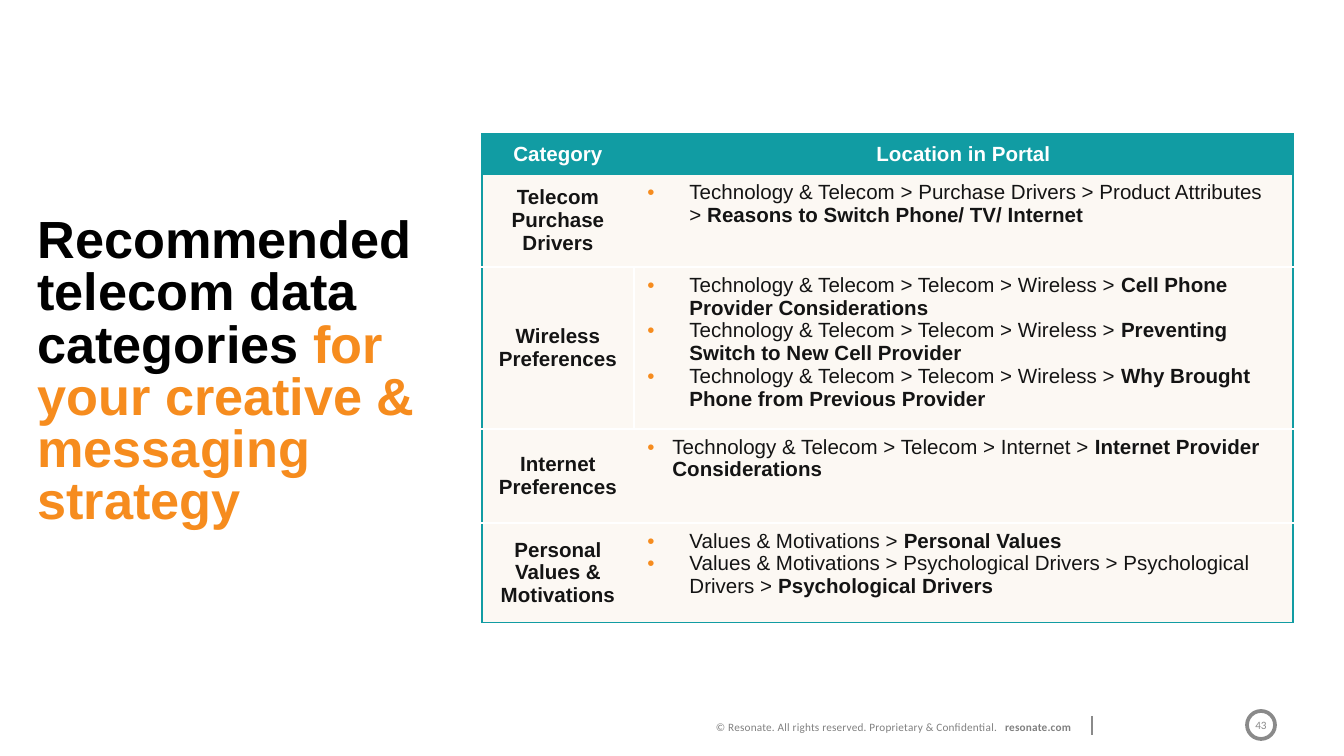
from lxml import etree
from pptx import Presentation
from pptx import util as u
from pptx.dml.color import RGBColor
from pptx.enum import shapes, text
from pptx.oxml.ns import qn

PX = 914400 / 134.4
TEAL, ORANGE, CREAM, INK, WHITE, GRAY = "119CA3", "F68C1E", "FCF8F3", "141414", "FFFFFF", "8A8A8A"
LEFT, CENTER, RIGHT = text.PP_ALIGN.LEFT, text.PP_ALIGN.CENTER, text.PP_ALIGN.RIGHT
TOP, MIDDLE = text.MSO_ANCHOR.TOP, text.MSO_ANCHOR.MIDDLE


def px(n):
    return u.Emu(round(n * PX))


def rgb(code):
    return RGBColor.from_string(code)


def sub(parent, tag, **attrs):
    return etree.SubElement(parent, qn(tag), attrs)


class Deck:
    def __init__(self, width, height):
        self.prs = Presentation()
        self.prs.slide_width, self.prs.slide_height = px(width), px(height)
        self.s = self.prs.slides.add_slide(self.prs.slide_layouts[5])

    def run(self, p, words, size, color, bold=False, font="Arial", spacing=None):
        r = p.add_run()
        r.text = words
        f = r.font
        f.size, f.name, f.bold = u.Pt(size), font, bold
        f.color.rgb = rgb(color)
        if spacing is not None:
            r._r.get_or_add_rPr().set("spc", str(round(spacing * 100)))

    def title(self, x, y, w, h, parts, size):
        sp = self.s.shapes.title
        sp.left, sp.top, sp.width, sp.height = map(px, (x, y, w, h))
        tf = sp.text_frame
        tf.word_wrap, tf.vertical_anchor = True, TOP
        tf.auto_size = text.MSO_AUTO_SIZE.NONE
        p = tf.paragraphs[0]
        p.alignment, p.line_spacing = LEFT, u.Pt(size)
        for words, color in parts:
            self.run(p, words, size, color, bold=True)

    def textbox(self, x, y, w, h, align):
        tf = self.s.shapes.add_textbox(*map(px, (x, y, w, h))).text_frame
        tf.word_wrap = True
        p = tf.paragraphs[0]
        p.alignment = align
        return p

    def line(self, x1, y1, x2, y2, color, width):
        c = self.s.shapes.add_connector(shapes.MSO_CONNECTOR.STRAIGHT, *map(px, (x1, y1, x2, y2)))
        c.line.color.rgb, c.line.width = rgb(color), u.Pt(width)
        sub(c._element.spPr, "a:effectLst")

    def badge(self, x, y, size, words, color):
        sp = self.s.shapes.add_shape(shapes.MSO_SHAPE.OVAL, *map(px, (x, y, size, size)))
        sp.shadow.inherit = False
        sp.fill.background()
        sp.line.color.rgb, sp.line.width = rgb(color), u.Pt(2)
        tf = sp.text_frame
        tf.word_wrap, tf.vertical_anchor = False, MIDDLE
        tf.margin_left = tf.margin_right = tf.margin_top = tf.margin_bottom = 0
        p = tf.paragraphs[0]
        p.alignment = CENTER
        self.run(p, words, 6, color, font="Calibri")

    def table(self, x, y, cols, rows):
        shape = self.s.shapes.add_table(len(rows), len(cols), *map(px, (x, y, sum(cols), sum(rows))))
        table = shape.table
        table.horz_banding = False
        for col, w in zip(table.columns, cols):
            col.width = px(w)
        for row, h in zip(table.rows, rows):
            row.height = px(h)
        return table

    def label(self, cell, words, color, fill):
        cell.fill.solid()
        cell.fill.fore_color.rgb = rgb(fill)
        cell.vertical_anchor = MIDDLE
        p = cell.text_frame.paragraphs[0]
        p.alignment = CENTER
        self.run(p, words, 11, color, bold=True)

    def bullets(self, cell, items, indent):
        cell.fill.solid()
        cell.fill.fore_color.rgb = rgb(CREAM)
        tf = cell.text_frame
        for i, (route, leaf) in enumerate(items):
            p = tf.add_paragraph() if i else tf.paragraphs[0]
            pPr = p._p.get_or_add_pPr()
            pPr.set("marL", str(px(indent)))
            pPr.set("indent", str(-px(indent)))
            sub(sub(pPr, "a:buClr"), "a:srgbClr", val=ORANGE)
            sub(pPr, "a:buFont", typeface="Arial")
            sub(pPr, "a:buChar", char="•")
            self.run(p, route, 11, INK)
            self.run(p, leaf, 11, INK, bold=True)

    def borders(self, cell, sides):
        """Sides run left, right, top, bottom; None means no line."""
        tcPr = cell._tc.get_or_add_tcPr()
        for i, (side, color) in enumerate(zip("LRTB", sides)):
            ln = etree.Element(qn("a:ln" + side))
            tcPr.insert(i, ln)
            if color:
                ln.set("w", str(u.Pt(1 if color == WHITE else 0.75)))
                sub(sub(ln, "a:solidFill"), "a:srgbClr", val=color)
            else:
                sub(ln, "a:noFill")

    def save(self):
        self.prs.save("out.pptx")


WIRELESS = "Technology & Telecom > Telecom > Wireless > "
# Category, row height, bullet indent, (route, data set) pairs
CATEGORIES = [
    ("Telecom Purchase Drivers", 93, 42, [
        ("Technology & Telecom > Purchase Drivers > Product Attributes > ",
         "Reasons to Switch Phone/ TV/ Internet")]),
    ("Wireless Preferences", 162, 42, [
        (WIRELESS, "Cell Phone Provider Considerations"),
        (WIRELESS, "Preventing Switch to New Cell Provider"),
        (WIRELESS, "Why Brought Phone from Previous Provider")]),
    ("Internet Preferences", 94, 25, [
        ("Technology & Telecom > Telecom > Internet > ", "Internet Provider Considerations")]),
    ("Personal Values & Motivations", 100, 42, [
        ("Values & Motivations > ", "Personal Values"),
        ("Values & Motivations > Psychological Drivers > Psychological Drivers > ",
         "Psychological Drivers")]),
]


def main():
    d = Deck(1344, 756)

    # Footer
    p = d.textbox(-19, 714, 1106, 27, RIGHT)
    footer = dict(size=6, color="808080", font="Calibri")
    d.run(p, "© Resonate. All rights reserved. Proprietary & Confidential.", spacing=0.1, **footer)
    d.run(p, " ", spacing=2.8, **footer)
    d.run(p, "resonate.com ", bold=True, spacing=0.1, **footer)
    d.line(1092, 716, 1092, 735, GRAY, 0.75)
    d.badge(1247, 711, 28, "43", GRAY)

    # Title
    d.title(24, 210, 487, 301, [
        ("Recommended telecom data categories ", "000000"),
        ("for your creative & messaging strategy", ORANGE)], 28)

    # Category table
    table = d.table(482, 134, [152, 659], [40] + [c[1] for c in CATEGORIES])
    for col, heading in enumerate(["Category", "Location in Portal"]):
        d.label(table.cell(0, col), heading, WHITE, TEAL)
    for row, (name, _, indent, items) in enumerate(CATEGORIES, 1):
        d.label(table.cell(row, 0), name, INK, CREAM)
        d.bullets(table.cell(row, 1), items, indent)

    # Teal frame and header rule, white rules between rows
    last = len(CATEGORIES)
    for row in range(last + 1):
        top = TEAL if row < 2 else WHITE
        bottom = TEAL if row in (0, last) else WHITE
        middle = WHITE if row == 2 else None
        d.borders(table.cell(row, 0), (TEAL, middle, top, bottom))
        d.borders(table.cell(row, 1), (middle, TEAL, top, bottom))

    d.save()


if __name__ == "__main__":
    main()
